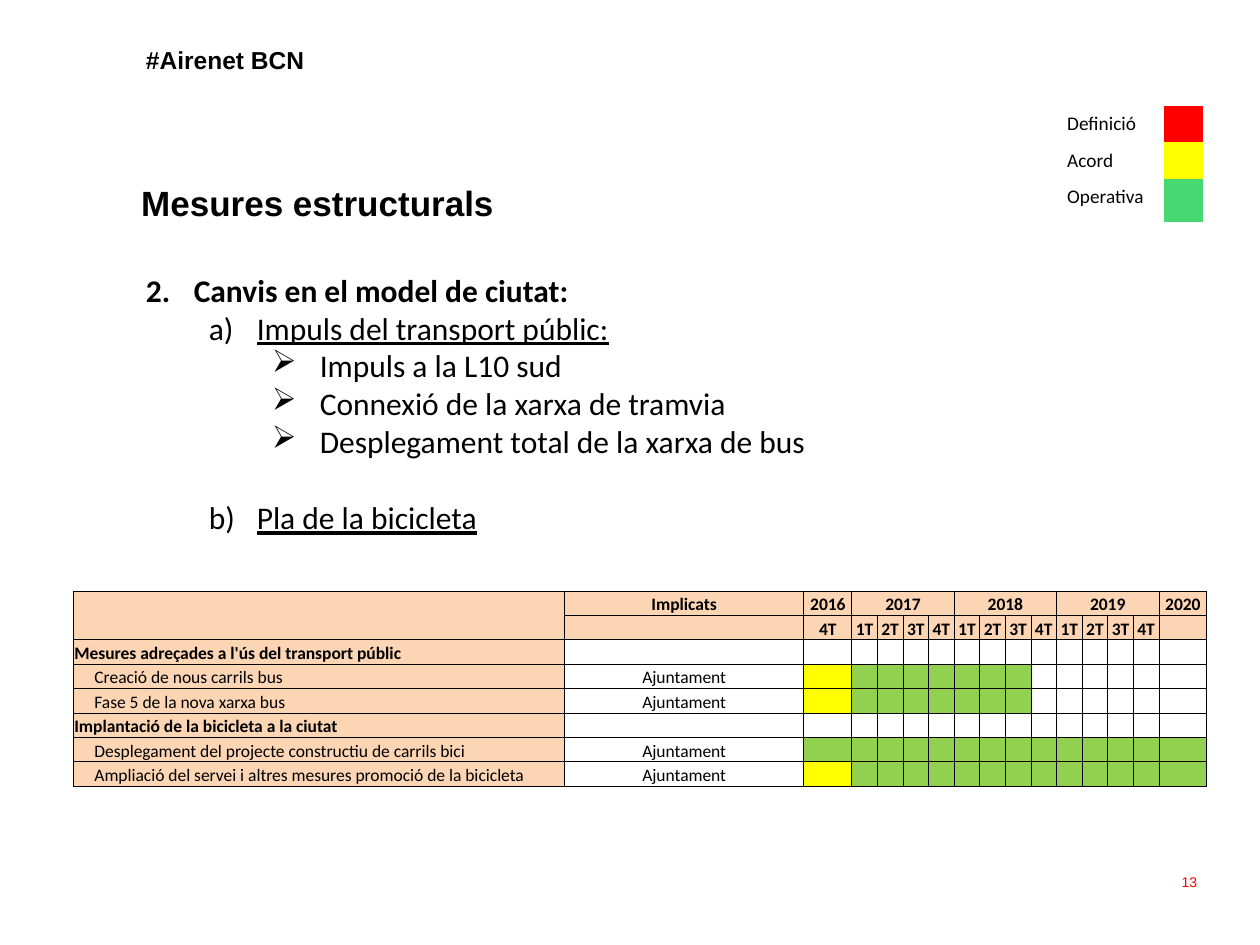
"""Build the slide on structural measures, with its schedule of actions by quarter."""
from lxml.etree import SubElement
from pptx import Presentation
from pptx.dml.color import RGBColor
from pptx.enum.text import MSO_ANCHOR, MSO_AUTO_SIZE, PP_ALIGN
from pptx.oxml import parse_xml
from pptx.oxml.ns import nsdecls, qn
from pptx.util import Inches, Pt

BLACK = RGBColor(0x00, 0x00, 0x00)
RED = RGBColor(0xFF, 0x00, 0x00)
YELLOW = RGBColor(0xFF, 0xFF, 0x00)
MINT = RGBColor(0x47, 0xD8, 0x72)
GREEN = RGBColor(0x92, 0xD0, 0x50)
PEACH = RGBColor(0xFC, 0xD5, 0xB4)
NO_GRID_STYLE = "{2D5ABB26-0587-4C30-8999-92F81FD0307C}"


def add_span(paragraph, text, font, size, bold=False, color=BLACK):
    span = paragraph.add_run()
    span.text = text
    span.font.name = font
    span.font.size = Pt(size)
    span.font.bold = bold
    span.font.color.rgb = color
    return span


def add_plain_table(page, left, top, widths, heights):
    frame = page.shapes.add_table(
        len(heights), len(widths), Inches(left), Inches(top),
        Inches(sum(widths)), Inches(sum(heights)))
    table = frame.table
    table.first_row = False
    table.horz_banding = False
    table._tbl.tblPr.find(qn("a:tableStyleId")).text = NO_GRID_STYLE
    for column, width in zip(table.columns, widths):
        column.width = Inches(width)
    for row, height in zip(table.rows, heights):
        row.height = Inches(height)
    for cell in table.iter_cells():
        cell.fill.background()
        cell.text_frame.paragraphs[0]._p.get_or_add_endParaRPr().set("sz", "1000")
    return table


deck = Presentation()
deck.slide_width = Inches(10)
deck.slide_height = Inches(7.5)
page = deck.slides.add_slide(deck.slide_layouts[5])

title = page.shapes.title
header = page.shapes.add_textbox(Inches(1.06), Inches(0.21), Inches(4.69), Inches(0.94))
title.left, title.top = Inches(1.02), Inches(1.39)
title.width, title.height = Inches(4.06), Inches(0.44)
for box, text, size in [(header, "#Airenet BCN", 14), (title, "Mesures estructurals", 20)]:
    frame = box.text_frame
    frame.word_wrap = True
    frame.auto_size = MSO_AUTO_SIZE.NONE
    frame.vertical_anchor = MSO_ANCHOR.TOP
    paragraph = frame.paragraphs[0]
    paragraph.alignment = PP_ALIGN.LEFT
    paragraph.line_spacing = Pt(24)
    add_span(paragraph, text, "Arial", size, bold=True)

number = page.shapes.add_textbox(Inches(7.27), Inches(6.8), Inches(2.33), Inches(0.4))
number.text_frame.word_wrap = True
number.text_frame.vertical_anchor = MSO_ANCHOR.MIDDLE
paragraph = number.text_frame.paragraphs[0]
paragraph.alignment = PP_ALIGN.RIGHT
add_span(paragraph, "13", "Arial", 8, color=RED)

BULLETS = [
    ("buAutoNum", {"type": "arabicPeriod", "startAt": "2"}),
    ("buAutoNum", {"type": "alphaLcParenR"}),
    ("buChar", {"char": "➢"}),
]
outline = [
    (0, "Canvis en el model de ciutat:", 0),
    (1, "Impuls del transport públic:", 0),
    (2, "Impuls a la L10 sud", 0),
    (2, "Connexió de la xarxa de tramvia", 0),
    (2, "Desplegament total de la xarxa de bus", 0),
    (1, "Pla de la bicicleta", 22),
]
body = page.shapes.add_textbox(Inches(1.06), Inches(2.1), Inches(8.5), Inches(2.83))
body.text_frame.word_wrap = True
for index, (level, text, gap) in enumerate(outline):
    paragraph = body.text_frame.add_paragraph() if index else body.text_frame.paragraphs[0]
    paragraph.level = level
    paragraph.alignment = PP_ALIGN.JUSTIFY
    properties = paragraph._p.get_or_add_pPr()
    properties.set("marL", str(Inches(0.38 + 0.5 * level)))
    properties.set("indent", str(Inches(-0.38)))
    tag, attributes = BULLETS[level]
    SubElement(properties, qn(f"a:{tag}"), attributes)
    if gap:
        paragraph.space_before = Pt(gap)
    span = add_span(paragraph, text, "Calibri", 18, bold=level == 0)
    span.font.underline = level == 1

legend = add_plain_table(page, 8.37, 0.84, [0.87, 0.31], [0.29, 0.29, 0.34])
phases = [("Definició", RED), ("Acord", YELLOW), ("Operativa", MINT)]
for row, (phase, color) in enumerate(phases):
    add_span(legend.cell(row, 0).text_frame.paragraphs[0], phase, "Calibri", 11)
    swatch = legend.cell(row, 1)
    swatch.fill.solid()
    swatch.fill.fore_color.rgb = color

quarter_width = 2.44 / 12
schedule = add_plain_table(
    page, 0.58, 4.69, [3.9, 1.9, 0.38] + [quarter_width] * 12 + [0.38], [1.55 / 8] * 8)
quarters = ["1T", "2T", "3T", "4T"]
labels = {(0, 1): "Implicats", (0, 2): "2016", (0, 3): "2017", (0, 7): "2018",
          (0, 11): "2019", (0, 15): "2020", (1, 2): "4T"}
labels.update({(1, 3 + step): quarters[step % 4] for step in range(12)})

actions = [
    ("Mesures adreçades a l'ús del transport públic", []),
    ("Creació de nous carrils bus", [YELLOW] + [GREEN] * 7),
    ("Fase 5 de la nova xarxa bus", [YELLOW] + [GREEN] * 7),
    ("Implantació de la bicicleta a la ciutat", []),
    ("Desplegament del projecte constructiu de carrils bici", [GREEN] * 14),
    ("Ampliació del servei i altres mesures promoció de la bicicleta", [YELLOW] + [GREEN] * 13),
]
fills = {(row, column): PEACH for row in range(8) for column in range(16)
         if row < 2 or column == 0}
for row, (action, progress) in enumerate(actions, start=2):
    labels[row, 0] = action
    if progress:
        labels[row, 1] = "Ajuntament"
    for column, color in enumerate(progress, start=2):
        fills[row, column] = color

for row in range(8):
    for column in range(16):
        cell = schedule.cell(row, column)
        is_action = row > 1 and bool(actions[row - 2][1])
        cell.margin_left = Inches(0.17 if is_action and column == 0 else 0.01)
        cell.margin_right = cell.margin_top = Inches(0.01)
        cell.margin_bottom = 0
        cell.vertical_anchor = MSO_ANCHOR.BOTTOM
        if (row, column) in fills:
            cell.fill.solid()
            cell.fill.fore_color.rgb = fills[row, column]
        for position, side in enumerate(["lnL", "lnR", "lnT", "lnB"]):
            border = parse_xml(
                f'<a:{side} {nsdecls("a")} w="{Pt(0.5)}"><a:solidFill>'
                f'<a:srgbClr val="{BLACK}"/></a:solidFill></a:{side}>')
            cell._tc.get_or_add_tcPr().insert(position, border)
        if (row, column) in labels:
            paragraph = cell.text_frame.paragraphs[0]
            paragraph.alignment = PP_ALIGN.CENTER if column else PP_ALIGN.LEFT
            add_span(paragraph, labels[row, column], "Calibri", 10, bold=not is_action)

schedule.cell(0, 0).merge(schedule.cell(1, 0))
for first in (3, 7, 11):
    schedule.cell(0, first).merge(schedule.cell(0, first + 3))

deck.save("out.pptx")
